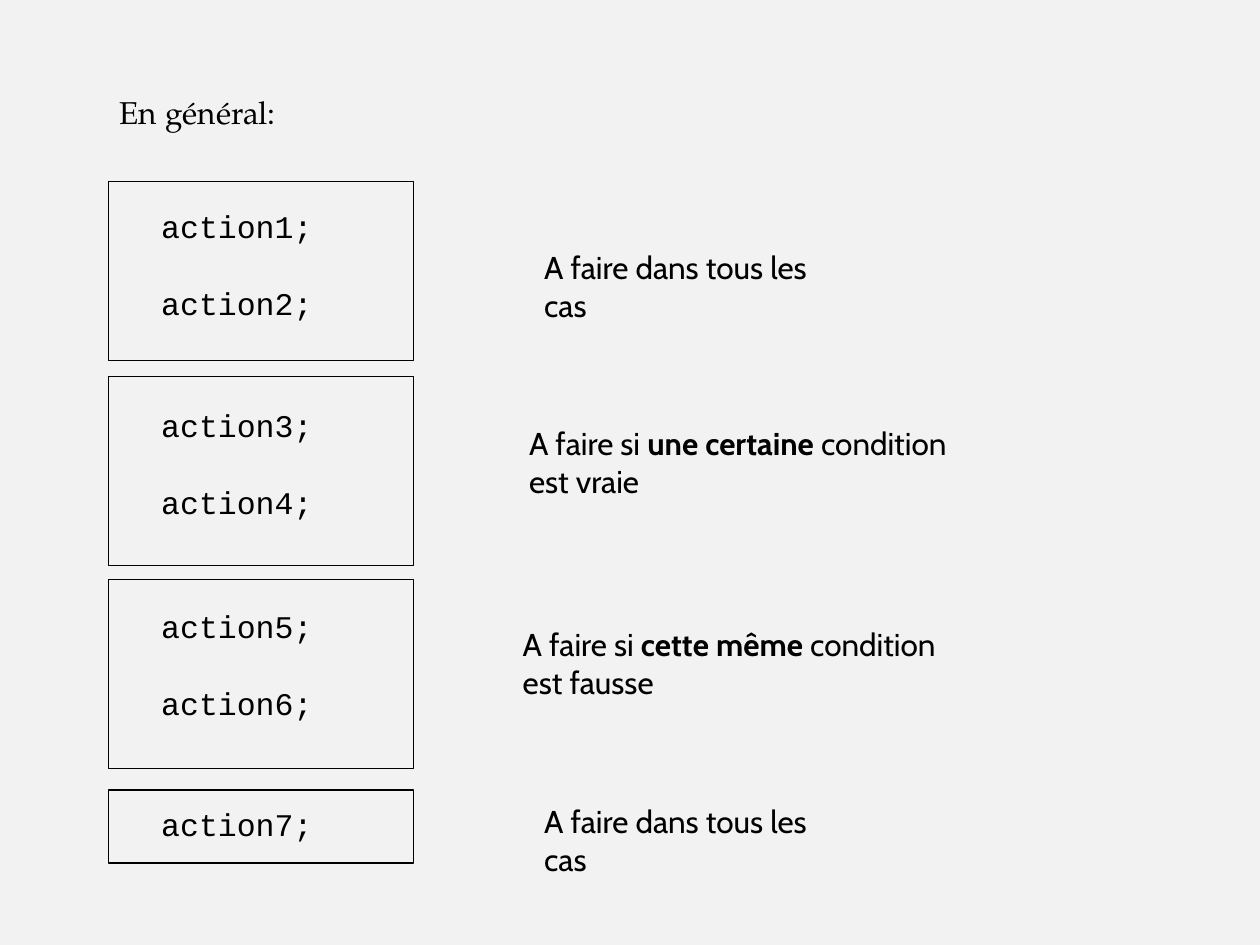
from pptx import Presentation
from pptx.dml.color import RGBColor
from pptx.enum.shapes import MSO_SHAPE
from pptx.enum.text import MSO_ANCHOR, PP_ALIGN
from pptx.util import Inches, Pt

TITLE = "En général:"
ALWAYS = [[("A faire dans tous les cas", False)]]
# Code lines, frame (top, height), code top, note (left, top, width, height), note paragraphs
BLOCKS = [
    (["action1;", "action2;"], (1.44, 1.42), 1.59, (4.22, 1.92, 2.64, 0.4), ALWAYS),
    (["action3;", "action4;"], (2.99, 1.5), 3.17, (4.1, 3.32, 3.85, 0.7),
     [[("A faire si ", False), ("une certaine", True), (" condition", False)],
      [("est vraie", False)]]),
    (["action5;", "action6;"], (4.6, 1.5), 4.77, (4.05, 4.91, 3.79, 0.7),
     [[("A faire si ", False), ("cette même", True), (" condition", False)],
      [("est fausse", False)]]),
    (["action7;"], (6.27, 0.58), 6.34, (4.22, 6.32, 2.64, 0.4), ALWAYS),
]
FRAME_LEFT, FRAME_WIDTH = 0.86, 2.42
CODE_LEFT, CODE_WIDTH = 1.18, 1.4
LINE_HEIGHT, CODE_STEP, PADDING = 0.3, 0.6, 0.1
CODE_GAP = 22.5  # points between two code lines


def color(hex_value):
    return RGBColor.from_string(hex_value)


def write(shape, paragraphs, font, align=PP_ALIGN.LEFT, wrap=True, gap=0):
    """Fill a shape with paragraphs, each a list of (text, bold) runs."""
    frame = shape.text_frame
    frame.word_wrap = wrap
    frame.vertical_anchor = MSO_ANCHOR.TOP
    for index, runs in enumerate(paragraphs):
        paragraph = frame.add_paragraph() if index else frame.paragraphs[0]
        paragraph.alignment = align
        paragraph.space_before = Pt(gap if index else 0)
        paragraph.line_spacing = 1.0
        for text, bold in runs:
            run = paragraph.add_run()
            run.text = text
            run.font.name = font
            run.font.size = Pt(18)
            run.font.bold = bold
            run.font.color.rgb = color("000000")


def add_frame(slide, top, height):
    shape = slide.shapes.add_shape(
        MSO_SHAPE.RECTANGLE, Inches(FRAME_LEFT), Inches(top),
        Inches(FRAME_WIDTH), Inches(height))
    shape.shadow.inherit = False
    shape.fill.background()
    shape.line.color.rgb = color("000000")
    shape.line.width = Pt(0.75)


def add_text(slide, box, paragraphs, **text_format):
    shape = slide.shapes.add_textbox(*map(Inches, box))
    write(shape, paragraphs, **text_format)


def main():
    presentation = Presentation()
    presentation.slide_width, presentation.slide_height = Inches(10), Inches(7.5)
    slide = presentation.slides.add_slide(presentation.slide_layouts[5])
    slide.background.fill.solid()
    slide.background.fill.fore_color.rgb = color("F2F2F2")

    title = slide.shapes.title
    title.left, title.top, title.width, title.height = map(Inches, (0.85, 0.69, 6.5, 0.4))
    write(title, [[(TITLE, False)]], font="TeX Gyre Pagella")

    for code, frame, code_top, note_box, note in BLOCKS:
        add_frame(slide, *frame)
        code_height = PADDING + LINE_HEIGHT + CODE_STEP * (len(code) - 1)
        add_text(slide, (CODE_LEFT, code_top, CODE_WIDTH, code_height),
                 [[(line, False)] for line in code], font="Courier New",
                 align=PP_ALIGN.CENTER, wrap=False, gap=CODE_GAP)
        add_text(slide, note_box, note, font="Cabin")

    presentation.save("out.pptx")


if __name__ == "__main__":
    main()
